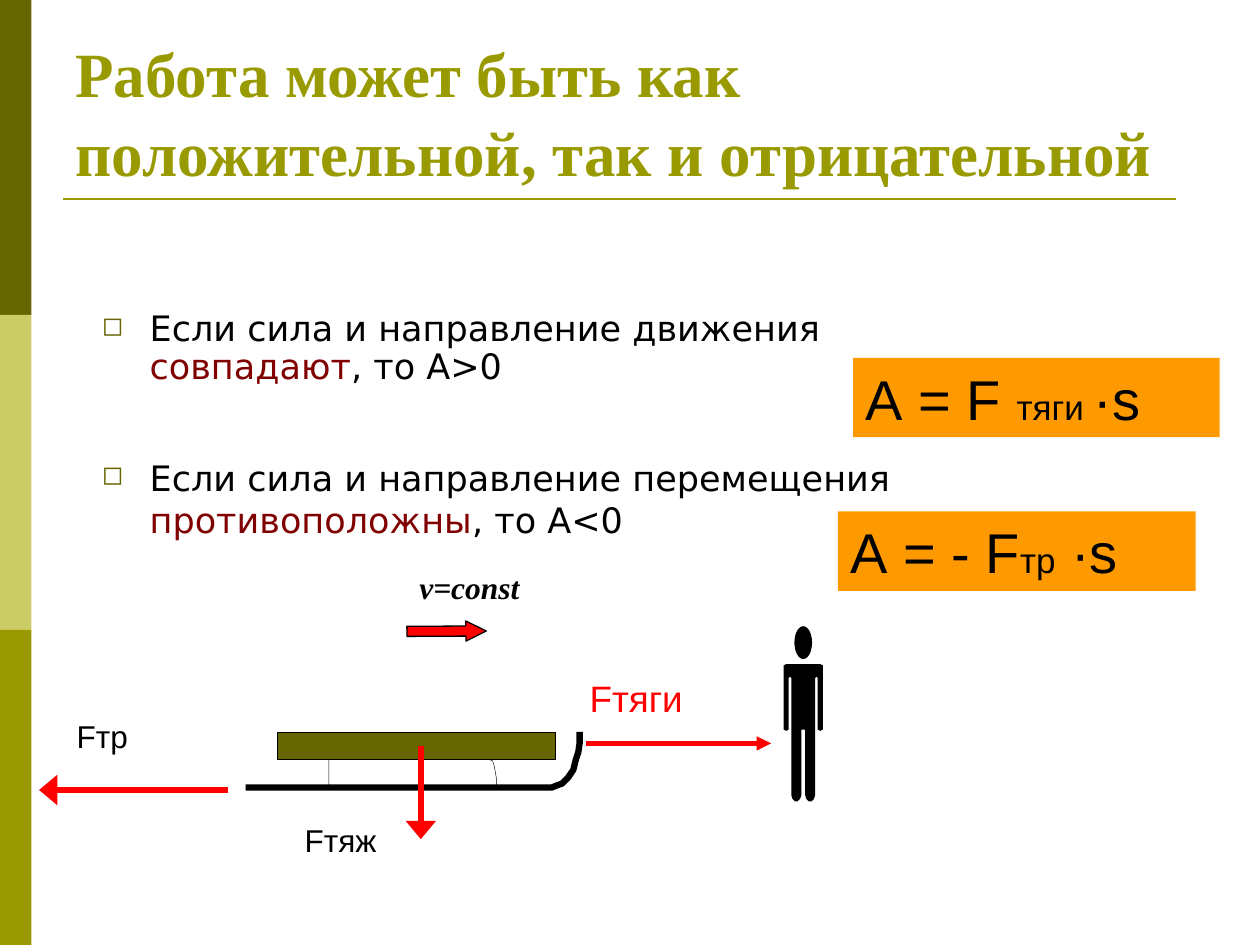
import math

import pptx
import pptx.dml.color
import pptx.enum.shapes
import pptx.enum.text
import pptx.oxml
import pptx.oxml.ns
import pptx.util
from pptx.util import Inches

COLORS = {
    "dark_olive": "666600", "light_olive": "CCCC66", "olive": "999900",
    "maroon": "800000", "red": "FF0000", "orange": "FF9900", "black": "000000",
}
SHAPES = pptx.enum.shapes.MSO_SHAPE
NAMESPACE = pptx.oxml.ns.nsdecls("a")


def paint(shape, fill=None, line=None, width=0.25):
    shape.shadow.inherit = False
    for target, color in ((shape.fill, fill), (shape.line.fill, line)):
        if color:
            target.solid()
            target.fore_color.rgb = pptx.dml.color.RGBColor.from_string(COLORS[color])
        else:
            target.background()
    if line:
        shape.line.width = pptx.util.Pt(width)


def write(shape, runs, wrap=True, bullet=False, inset=None, anchor="TOP", spacing=None):
    frame = shape.text_frame
    frame.word_wrap = wrap
    frame.vertical_anchor = pptx.enum.text.MSO_ANCHOR[anchor]
    if inset is not None:
        for side in ("left", "top", "right", "bottom"):
            setattr(frame, f"margin_{side}", Inches(inset))
    paragraph = frame.paragraphs[0]
    paragraph.alignment = pptx.enum.text.PP_ALIGN.LEFT
    if spacing:
        paragraph.line_spacing = spacing
    if bullet:
        properties = paragraph._p.get_or_add_pPr()
        properties.set("marL", str(Inches(0.38)))
        properties.set("indent", str(-Inches(0.38)))
        for element in (
            f'<a:buClr {NAMESPACE}><a:srgbClr val="{COLORS["dark_olive"]}"/></a:buClr>',
            f'<a:buSzPct {NAMESPACE} val="75000"/>',
            f'<a:buChar {NAMESPACE} char="◻"/>',
        ):
            properties.append(pptx.oxml.parse_xml(element))
    for text, color, style in runs:
        run = paragraph.add_run()
        run.text = text
        for name, value in style.items():
            setattr(run.font, name, pptx.util.Pt(value) if name == "size" else value)
        run.font.color.rgb = pptx.dml.color.RGBColor.from_string(COLORS[color])


presentation = pptx.Presentation()
presentation.slide_width = Inches(10)
presentation.slide_height = Inches(7.5)
slide = presentation.slides.add_slide(presentation.slide_layouts[6])
shapes = slide.shapes

for index, color in enumerate(("dark_olive", "light_olive", "olive")):
    band = shapes.add_shape(SHAPES.RECTANGLE, 0, Inches(2.5 * index), Inches(0.25), Inches(2.5))
    paint(band, color)

title = shapes.add_textbox(Inches(0.5), Inches(0.3), Inches(9), Inches(1.25))
title_style = {"name": "Times New Roman", "size": 36, "bold": True}
write(title, [("Работа может быть как положительной, так и отрицательной", "olive", title_style)],
      anchor="BOTTOM", spacing=1.05)

body_style = {"name": "DejaVu Sans", "size": 20}
statements = [
    (2.42, 6.3, 0.95, 0.9, "Если сила и направление движения ", "совпадают", ", то А>0"),
    (3.57, 6.97, 1.08, None, "Если сила и направление перемещения ", "противоположны", ", то А<0"),
]
for top, width, height, spacing, opening, keyword, ending in statements:
    statement = shapes.add_textbox(Inches(0.71), Inches(top), Inches(width), Inches(height))
    runs = [(opening, "black", body_style), (keyword, "maroon", body_style), (ending, "black", body_style)]
    write(statement, runs, bullet=True, spacing=spacing)

velocity_arrow = shapes.add_shape(SHAPES.RIGHT_ARROW, Inches(3.23), Inches(4.93), Inches(0.63), Inches(0.16))
velocity_arrow.adjustments[1] = 1.01
velocity_arrow.rotation = 359.7
paint(velocity_arrow, "red", "black", 0.75)

center = 6.375
right_half = [
    (6.39, 5.79), (6.39, 6.31), (6.4, 6.34), (6.42, 6.36), (6.44, 6.36), (6.46, 6.34),
    (6.47, 6.31), (6.47, 5.38), (6.48, 5.37), (6.49, 5.38), (6.49, 5.76), (6.49, 5.79),
    (6.51, 5.8), (6.53, 5.79), (6.53, 5.76), (6.53, 5.3), (6.53, 5.28), (6.51, 5.27),
]
body = right_half + [(2 * center - x, y) for x, y in reversed(right_half)]
angles = [math.tau * step / 32 for step in range(32)]
head = [(center + 0.07 * math.cos(angle), 5.1 + 0.13 * math.sin(angle)) for angle in angles]
builder = shapes.build_freeform(Inches(body[0][0]), Inches(body[0][1]))
builder.add_line_segments([(Inches(x), Inches(y)) for x, y in body[1:]], close=True)
builder.move_to(Inches(head[0][0]), Inches(head[0][1]))
builder.add_line_segments([(Inches(x), Inches(y)) for x, y in head[1:]], close=True)
paint(builder.convert_to_shape(), "black")

sled_seat = shapes.add_shape(SHAPES.RECTANGLE, Inches(2.2), Inches(5.81), Inches(2.21), Inches(0.22))
paint(sled_seat, "dark_olive", "black")

runner = [
    (4.6, 5.81), (4.6, 5.9), (4.59, 5.97), (4.57, 6.03), (4.55, 6.11), (4.51, 6.17),
    (4.46, 6.22), (4.43, 6.23), (4.38, 6.25), (1.95, 6.25),
]
rear_strut = [(2.61, 6.03), (2.61, 6.23), (2.6, 6.25)]
front_strut = [(3.89, 6.03), (3.91, 6.04), (3.92, 6.07), (3.93, 6.12), (3.94, 6.18), (3.94, 6.25)]
for points, width in ((runner, 3.63), (rear_strut, 0.25), (front_strut, 0.25)):
    builder = shapes.build_freeform(Inches(points[0][0]), Inches(points[0][1]))
    builder.add_line_segments([(Inches(x), Inches(y)) for x, y in points[1:]], close=False)
    paint(builder.convert_to_shape(), line="black", width=width)

lines = [
    (0.5, 1.58, 9.33, 1.58, "olive", 1.5, None),
    (4.65, 5.9, 6.12, 5.9, "red", 2.75, "med"),
    (1.81, 6.27, 0.31, 6.27, "red", 3.5, "lg"),
    (3.34, 5.92, 3.34, 6.66, "red", 3.5, "lg"),
]
for start_x, start_y, end_x, end_y, color, width, arrow_width in lines:
    connector = shapes.add_connector(
        pptx.enum.shapes.MSO_CONNECTOR.STRAIGHT,
        Inches(start_x), Inches(start_y), Inches(end_x), Inches(end_y))
    connector.line.color.rgb = pptx.dml.color.RGBColor.from_string(COLORS[color])
    connector.line.width = pptx.util.Pt(width)
    if arrow_width:
        connector.line._get_or_add_ln().append(pptx.oxml.parse_xml(
            f'<a:tailEnd {NAMESPACE} type="triangle" w="{arrow_width}" len="med"/>'))
    connector._element.spPr.append(pptx.oxml.parse_xml(f"<a:effectLst {NAMESPACE}/>"))

label_style = {"name": "Arial", "size": 18}
velocity_style = {"name": "Times New Roman", "size": 18, "bold": True, "italic": True}
labels = [
    ("v=const", 3.23, 4.46, 1, 0.4, "black", velocity_style, None),
    ("Fтяж", 2.32, 6.47, 0.77, 0.4, "black", label_style, None),
    ("Fтяги", 4.68, 5.36, 0.74, 0.35, "red", {"name": "Arial", "size": 21}, 0),
    ("Fтр", 0.51, 5.64, 0.61, 0.4, "black", label_style, None),
]
for text, left, top, width, height, color, style, inset in labels:
    label = shapes.add_textbox(Inches(left), Inches(top), Inches(width), Inches(height))
    write(label, [(text, color, style)], wrap=False, inset=inset)

formulas = [
    (6.65, 4.06, 2.84, (("А = - F", 32), ("тр", 20), (" ·s", 32))),
    (6.77, 2.84, 2.91, (("А = F ", 32), ("тяги ", 20), ("·s", 32))),
]
for left, top, width, parts in formulas:
    formula = shapes.add_shape(SHAPES.RECTANGLE, Inches(left), Inches(top), Inches(width), Inches(0.63))
    paint(formula, "orange")
    write(formula, [(text, "black", {"name": "Arial", "size": size}) for text, size in parts])

presentation.save("out.pptx")
